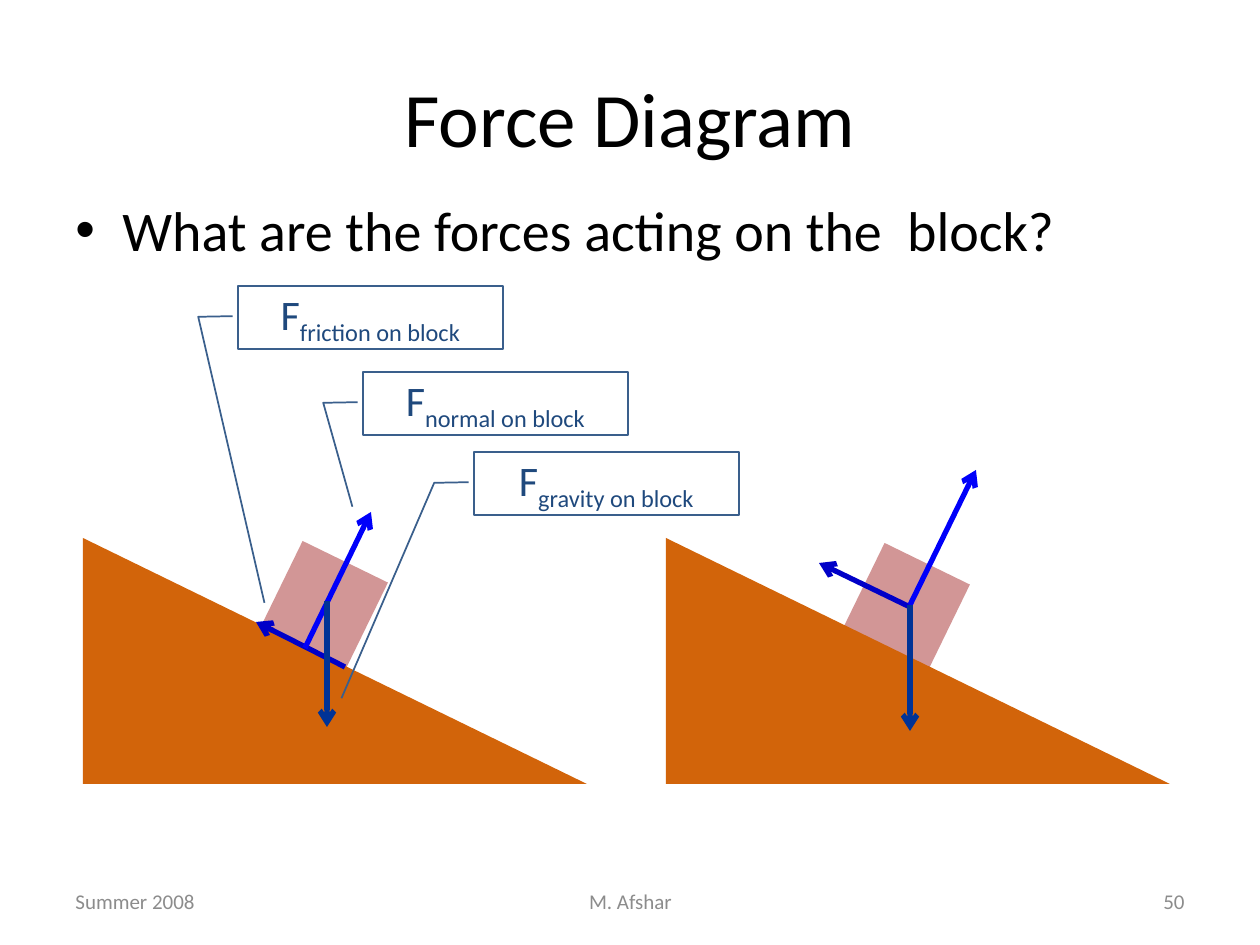
"""Build the force diagram slide: two inclined planes with labelled force arrows."""
from dataclasses import dataclass
from typing import NamedTuple

from lxml.etree import SubElement
from pptx import Presentation
from pptx.dml.color import RGBColor
from pptx.enum.shapes import MSO_CONNECTOR as Conn, MSO_SHAPE as Shape
from pptx.enum.text import MSO_ANCHOR as Anchor, PP_ALIGN as Align
from pptx.oxml.ns import qn
from pptx.util import Emu, Pt

SCALE = 914400 / 126


@dataclass(frozen=True)
class Theme:
    """Colours, font and type sizes of the slide."""
    font: str = "Calibri"
    ink: str = "000000"
    muted: str = "8C8C8C"
    label: str = "1F497D"
    outline: str = "3A5F8C"
    block: str = "D29696"
    ramp: str = "D2640A"
    friction: str = "0000C8"
    normal: str = "0000FA"
    gravity: str = "003396"
    title_size: int = 44
    body_size: int = 32
    label_size: int = 24
    footer_size: int = 12


class Box(NamedTuple):
    """A rectangle in px."""
    x: int
    y: int
    w: int
    h: int


class Force(NamedTuple):
    """An arrow from tail to head in px."""
    x1: int
    y1: int
    x2: int
    y2: int
    color: str


class Scene(NamedTuple):
    """A block on a ramp with its forces."""
    ramp: Box
    block: Box
    forces: tuple[Force, ...]


class Label(NamedTuple):
    """A callout naming a force, with its pointer end as fractions of the box."""
    x: int
    y: int
    agent: str
    tip_y: float
    tip_x: float


class Footer(NamedTuple):
    """A footer text in its box."""
    x: int
    w: int
    text: str
    align: Align


T = Theme()
SCENES = (
    Scene(Box(83, 538, 504, 246), Box(277, 557, 95, 95), (
        Force(345, 667, 256, 622, T.friction),
        Force(305, 648, 371, 512, T.normal),
        Force(327, 601, 327, 727, T.gravity))),
    Scene(Box(666, 538, 504, 246), Box(859, 559, 95, 95), (
        Force(910, 607, 819, 563, T.friction),
        Force(910, 605, 976, 470, T.normal),
        Force(910, 605, 910, 731, T.gravity))),
)
LABELS = (
    Label(238, 286, "friction", 5.03, 0.1),
    Label(363, 372, "normal", 2.14, -0.04),
    Label(474, 452, "gravity", 3.91, -0.5),
)
FOOTERS = (
    Footer(63, 294, "Summer 2008", Align.LEFT),
    Footer(431, 399, "M. Afshar", Align.CENTER),
    Footer(903, 294, "50", Align.RIGHT),
)


def px(*values: int) -> list[Emu]:
    """Turn px into EMU."""
    return [Emu(round(v * SCALE)) for v in values]


def style(p, size: int, color: str, align: Align) -> None:
    """Format a paragraph and its runs."""
    p.alignment = align
    for r in p.runs:
        r.font.name, r.font.size = T.font, Pt(size)
        r.font.color.rgb = RGBColor.from_string(color)


def add_text(shapes, box: Box, text: str, size: int, color: str,
             align: Align, anchor: Anchor):
    """Add a wrapping text box and return its paragraph."""
    tf = shapes.add_textbox(*px(*box)).text_frame
    tf.word_wrap, tf.vertical_anchor, tf.text = True, anchor, text
    style(tf.paragraphs[0], size, color, align)
    return tf.paragraphs[0]


def add_solid(shapes, kind: Shape, box: Box, color: str, rotation: int = 0) -> None:
    """Add a filled shape without outline."""
    sp = shapes.add_shape(kind, *px(*box))
    sp.shadow.inherit = False
    sp.fill.solid()
    sp.fill.fore_color.rgb = RGBColor.from_string(color)
    sp.line.fill.background()
    sp.rotation = rotation


def add_force(shapes, force: Force) -> None:
    """Add a force arrow."""
    cx = shapes.add_connector(Conn.STRAIGHT, *px(*force[:4]))
    cx.line.width = Pt(3)
    cx.line.color.rgb = RGBColor.from_string(force.color)
    sp_pr = cx.line._get_or_add_ln().getparent()
    SubElement(sp_pr.find(qn("a:ln")), qn("a:tailEnd"), type="arrow")
    SubElement(sp_pr, qn("a:effectLst"))


def add_scene(shapes, scene: Scene) -> None:
    """Add a block, its ramp and its forces as one group."""
    group = shapes.add_group_shape().shapes
    add_solid(group, Shape.RECTANGLE, scene.block, T.block, 26)
    add_solid(group, Shape.RIGHT_TRIANGLE, scene.ramp, T.ramp)
    for force in scene.forces:
        add_force(group, force)


def add_label(shapes, label: Label) -> None:
    """Add a callout with a subscripted force name."""
    sp = shapes.add_shape(Shape.LINE_CALLOUT_2, *px(label.x, label.y, 265, 63))
    sp.shadow.inherit = False
    sp.fill.background()
    sp.line.color.rgb = RGBColor.from_string(T.outline)
    sp.line.width = Pt(1)
    for i, value in enumerate((0.48, -0.02, 0.49, -0.15, label.tip_y, label.tip_x)):
        sp.adjustments[i] = value
    tf = sp.text_frame
    tf.vertical_anchor, tf.text = Anchor.MIDDLE, "F"
    p = tf.paragraphs[0]
    r = p.add_run()
    r.text = f"{label.agent} on block"
    style(p, T.label_size, T.label, Align.CENTER)
    r.font._element.set("baseline", "-25000")


def add_bullet(p) -> None:
    """Give a paragraph a hanging bullet and proportional space before."""
    indent = px(47)[0]
    p_pr = p._p.get_or_add_pPr()
    p_pr.set("marL", str(indent))
    p_pr.set("indent", str(-indent))
    SubElement(SubElement(p_pr, qn("a:spcBef")), qn("a:spcPct"), val="20000")
    SubElement(p_pr, qn("a:buFont"), typeface="Arial")
    SubElement(p_pr, qn("a:buChar"), char="•")


def main() -> None:
    """Build and save the slide."""
    prs = Presentation()
    prs.slide_width, prs.slide_height = px(1260, 945)
    s = prs.slides.add_slide(prs.slide_layouts[5])
    title = s.shapes.title
    title.left, title.top, title.width, title.height = px(63, 38, 1134, 157)
    tf = title.text_frame
    tf.text, tf.vertical_anchor = "Force Diagram", Anchor.MIDDLE
    style(tf.paragraphs[0], T.title_size, T.ink, Align.CENTER)
    for f in FOOTERS:
        add_text(s.shapes, Box(f.x, 876, f.w, 50), f.text, T.footer_size, T.muted,
                 f.align, Anchor.MIDDLE)
    for scene in SCENES:
        add_scene(s.shapes, scene)
    add_bullet(add_text(s.shapes, Box(63, 189, 1134, 126),
                        "What are the forces acting on the  block?",
                        T.body_size, T.ink, Align.LEFT, Anchor.TOP))
    for label in LABELS:
        add_label(s.shapes, label)
    prs.save("out.pptx")


if __name__ == "__main__":
    main()
